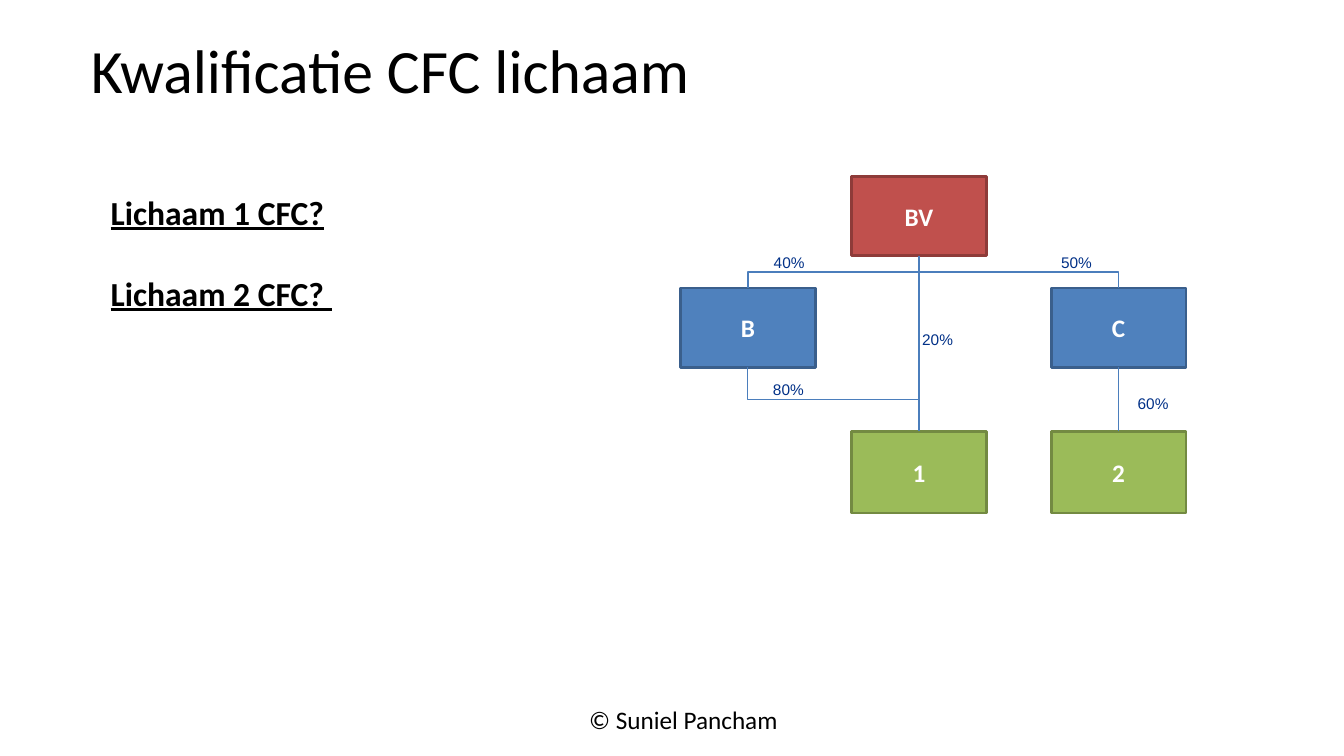
from dataclasses import dataclass

from lxml import etree
from pptx import Presentation
from pptx.dml.color import RGBColor
from pptx.enum.shapes import MSO_CONNECTOR, MSO_SHAPE
from pptx.enum.text import MSO_ANCHOR, PP_ALIGN
from pptx.oxml.ns import qn
from pptx.util import Cm, Pt

RECTANGLE = MSO_SHAPE.RECTANGLE
STRAIGHT, ELBOW = MSO_CONNECTOR.STRAIGHT, MSO_CONNECTOR.ELBOW
LEFT, CENTER = PP_ALIGN.LEFT, PP_ALIGN.CENTER
TOP, MIDDLE = MSO_ANCHOR.TOP, MSO_ANCHOR.MIDDLE


@dataclass(frozen=True)
class Theme:
    font: str = "Calibri"
    label_font: str = "Arial"
    black: str = "000000"
    white: str = "FFFFFF"
    label: str = "003087"
    connector: str = "4B7EBC"
    red: tuple = ("C0504D", "8E3B39")
    blue: tuple = ("4F81BD", "3A5F8C")
    green: tuple = ("9BBB59", "738A42")
    title_size: int = 44
    question_size: int = 24
    body_size: int = 18
    label_size: int = 11
    border_width: float = 2
    connector_width: float = 0.75


@dataclass(frozen=True)
class Entity:
    name: str
    left: float
    top: float
    height: float
    colors: tuple
    width: float = 3.4

    @property
    def middle(self):
        return self.left + self.width / 2

    @property
    def bottom(self):
        return self.top + self.height


def write_text(frame, lines, *, font, size, color, bold=False, underline=False,
               align=LEFT, anchor=TOP, wrap=True, space_after=0):
    frame.word_wrap = wrap
    frame.vertical_anchor = anchor
    for index, line in enumerate(lines):
        paragraph = frame.add_paragraph() if index else frame.paragraphs[0]
        paragraph.alignment = align
        paragraph.space_after = Pt(space_after)
        run = paragraph.add_run()
        run.text = line
        run.font.name = font
        run.font.size = Pt(size)
        run.font.bold = bold
        run.font.underline = underline
        run.font.color.rgb = RGBColor.from_string(color)


class SlideBuilder:
    def __init__(self, slide, theme):
        self.slide = slide
        self.theme = theme

    def text(self, lines, left, top, width, height, margins=None, **text_format):
        """Add a text box; margins are left, top, right, bottom in centimetres."""
        box = self.slide.shapes.add_textbox(Cm(left), Cm(top), Cm(width), Cm(height))
        frame = box.text_frame
        if margins:
            (frame.margin_left, frame.margin_top,
             frame.margin_right, frame.margin_bottom) = map(Cm, margins)
        style = {"font": self.theme.font, "size": self.theme.body_size,
                 "color": self.theme.black, **text_format}
        write_text(frame, lines, **style)

    def label(self, percentage, left, top):
        self.text([percentage], left, top, 3.07, 0.74, font=self.theme.label_font,
                  size=self.theme.label_size, color=self.theme.label)

    def entity(self, entity):
        shape = self.slide.shapes.add_shape(
            RECTANGLE, Cm(entity.left), Cm(entity.top), Cm(entity.width), Cm(entity.height))
        fill, border = entity.colors
        shape.shadow.inherit = False
        shape.fill.solid()
        shape.fill.fore_color.rgb = RGBColor.from_string(fill)
        shape.line.color.rgb = RGBColor.from_string(border)
        shape.line.width = Pt(self.theme.border_width)
        write_text(shape.text_frame, [entity.name], font=self.theme.font,
                   size=self.theme.body_size, color=self.theme.white, bold=True,
                   align=CENTER, anchor=MIDDLE)

    def connect(self, parent, child):
        """Link bottom centre to top centre, with an elbow if they are not aligned."""
        start_x, start_y, end_x, end_y = parent.middle, parent.bottom, child.middle, child.top
        if start_x == end_x:
            connector = self.slide.shapes.add_connector(
                STRAIGHT, Cm(start_x), Cm(start_y), Cm(end_x), Cm(end_y))
        else:
            # An elbow leaves sideways, so its box is turned a quarter.
            drop, span = end_y - start_y, abs(end_x - start_x)
            left = (start_x + end_x - drop) / 2
            top = (start_y + end_y - span) / 2
            connector = self.slide.shapes.add_connector(
                ELBOW, Cm(left), Cm(top), Cm(left + drop), Cm(top + span))
            transform = connector._element.spPr.find(qn("a:xfrm"))
            goes_right = end_x > start_x
            transform.set("rot", str((270 if goes_right else 90) * 60000))
            if goes_right:
                transform.set("flipH", "1")
        connector.line.color.rgb = RGBColor.from_string(self.theme.connector)
        connector.line.width = Pt(self.theme.connector_width)
        etree.SubElement(connector._element.spPr, qn("a:effectLst"))


def main():
    presentation = Presentation()
    presentation.slide_width, presentation.slide_height = Cm(33.87), Cm(19.05)
    slide = presentation.slides.add_slide(presentation.slide_layouts[6])
    theme = Theme()
    builder = SlideBuilder(slide, theme)

    builder.text(["Kwalificatie CFC lichaam"], 2.29, 0.81, 28.78, 1.88,
                 margins=(0, 0, 0, 0), size=theme.title_size)
    builder.text(["Lichaam 1 CFC?", "Lichaam 2 CFC? "], 2.79, 3.1, 16.03, 13.74,
                 margins=(0, 1.73, 0, 0), size=theme.question_size,
                 bold=True, underline=True, space_after=29)

    left_column, middle_column, right_column = 17.15, 21.46, 26.49
    holding = Entity("BV", middle_column, 4.45, 2, theme.red)
    company_b = Entity("B", left_column, 7.26, 2, theme.blue)
    company_c = Entity("C", right_column, 7.26, 2, theme.blue)
    body_1 = Entity("1", middle_column, 10.87, 2.06, theme.green)
    body_2 = Entity("2", right_column, 10.87, 2.06, theme.green)
    for entity in (holding, company_b, company_c, body_1, body_2):
        builder.entity(entity)

    for parent, child, share, left, top in (
        (holding, body_1, "20%", 22.99, 8.2),
        (company_c, body_2, "60%", 28.42, 9.8),
        (holding, company_b, "40%", 19.25, 6.25),
        (holding, company_c, "50%", 26.49, 6.25),
        (company_b, body_1, "80%", 19.23, 9.45),
    ):
        builder.connect(parent, child)
        builder.label(share, left, top)

    builder.text(["© Suniel Pancham"], 14.6, 17.63, 5.31, 1.02, wrap=False)
    presentation.save("out.pptx")


if __name__ == "__main__":
    main()
